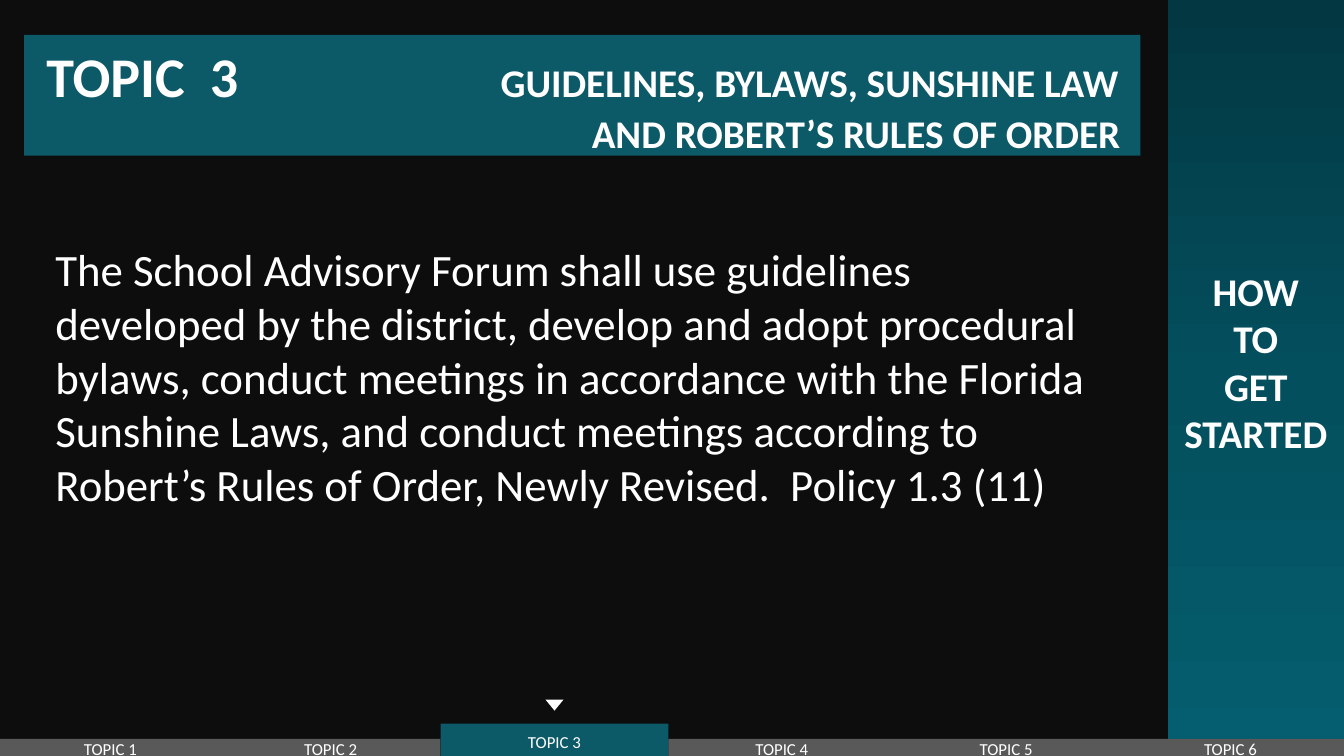
from copy import deepcopy
from dataclasses import dataclass
from itertools import accumulate

from lxml import etree
from pptx import Presentation, util as u
from pptx.dml.color import RGBColor
from pptx.enum import shapes, text
from pptx.oxml.ns import qn


@dataclass(frozen=True)
class Theme:
    font: str = "Calibri"
    ground: str = "0D0D0D"
    accent: str = "0C5968"
    tab: str = "595959"
    ink: str = "FFFFFF"
    sidebar: tuple = ("033742", "044F5E", "055E6F")
    topic_size: int = 40
    heading_size: int = 28
    body_size: int = 32
    tab_size: int = 12


THEME = Theme()
WIDTH, HEIGHT = u.Inches(13.33), u.Inches(7.5)
COLUMN, ROW = WIDTH / 100, HEIGHT / 100  # the slide is a 100 by 100 grid


def apply(target, values):
    for name, value in values.items():
        setattr(target, name, value)


def emu(box):
    left, top, width, height = box
    return [round(n) for n in (left * COLUMN, top * ROW, width * COLUMN, height * ROW)]


def solid(fill, colour):
    fill.solid()
    fill.fore_color.rgb = RGBColor.from_string(colour)


def style(font, size, bold=False):
    apply(font, {"name": THEME.font, "size": u.Pt(size), "bold": bold})
    font.color.rgb = RGBColor.from_string(THEME.ink)


def add_panel(slide, preset, box, colour):
    panel = slide.shapes.add_shape(preset, *emu(box))
    panel.shadow.inherit = False
    panel.line.fill.background()
    solid(panel.fill, colour)
    return panel


def write_centred(panel, words, size, bold=False, bottom=0):
    frame = panel.text_frame
    apply(frame, {"margin_left": 0, "margin_right": 0, "margin_top": 0,
                  "margin_bottom": bottom, "word_wrap": True,
                  "vertical_anchor": text.MSO_ANCHOR.MIDDLE})
    line = frame.paragraphs[0]
    line.text = words
    line.alignment = text.PP_ALIGN.CENTER
    style(line.font, size, bold)


# Sidebar with the section name
def add_sidebar(slide, box):
    sidebar = add_panel(slide, shapes.MSO_SHAPE.RECTANGLE, box, THEME.accent)
    sidebar.fill.gradient()
    sidebar.fill.gradient_angle = 270
    first = sidebar.fill.gradient_stops[0]
    stop_list = sidebar.fill._fill._gradFill.find(qn("a:gsLst"))
    stop_list.insert(1, deepcopy(stop_list[0]))
    for stop, colour, place in zip(sidebar.fill.gradient_stops, THEME.sidebar, (0, 0.5, 1)):
        stop.color.rgb = RGBColor.from_string(colour)
        stop.position = place
    write_centred(sidebar, "HOW\vTO\vGET\vSTARTED", THEME.heading_size,
                  bold=True, bottom=u.Inches(0.32))


# Title banner: topic number at left, heading at right
def add_banner(slide, box):
    banner = slide.shapes.title
    apply(banner, dict(zip(("left", "top", "width", "height"), emu(box))))
    solid(banner.fill, THEME.accent)
    frame = banner.text_frame
    left, right = u.Inches(0.22), u.Inches(0.2)
    apply(frame, {"margin_left": left, "margin_right": right,
                  "margin_top": u.Inches(0.07), "margin_bottom": 0,
                  "word_wrap": True, "auto_size": text.MSO_AUTO_SIZE.NONE,
                  "vertical_anchor": text.MSO_ANCHOR.TOP})

    opening = frame.paragraphs[0]
    opening.alignment = text.PP_ALIGN.LEFT
    tabs = etree.SubElement(opening._p.get_or_add_pPr(), qn("a:tabLst"))
    edge = banner.width - left - right - u.Inches(0.02)
    etree.SubElement(tabs, qn("a:tab"), pos=str(edge), algn="r")
    closing = frame.add_paragraph()
    closing.alignment = text.PP_ALIGN.RIGHT

    for line, words, size in (
            (opening, "TOPIC  3\t", THEME.topic_size),
            (opening, "GUIDELINES, BYLAWS, SUNSHINE LAW", THEME.heading_size),
            (closing, "AND ROBERT’S RULES OF ORDER", THEME.heading_size)):
        part = line.add_run()
        part.text = words
        style(part.font, size, bold=True)


# Policy statement
def add_statement(slide, box):
    frame = slide.shapes.add_textbox(*emu(box)).text_frame
    frame.word_wrap = True
    policy = frame.paragraphs[0]
    policy.text = (
        "The School Advisory Forum shall use guidelines developed by the district, "
        "develop and adopt procedural bylaws, conduct meetings in accordance with "
        "the Florida Sunshine Laws, and conduct meetings according to Robert’s "
        "Rules of Order, Newly Revised.  Policy 1.3 (11)")
    style(policy.font, THEME.body_size)


# Topic tabs along the foot, the current one raised under a marker
def add_topic_tabs(slide, box, shares, current):
    left, top, width, height = box
    rise, marker_width, marker_height = 2, 1.35, 1.47
    starts = accumulate(shares, initial=0)
    for number, (start, share) in enumerate(zip(starts, shares), 1):
        lift = rise if number == current else 0
        tab_left, tab_width = left + width * start / 100, width * share / 100
        tab = add_panel(slide, shapes.MSO_SHAPE.RECTANGLE,
                        (tab_left, top - lift, tab_width, height + lift),
                        THEME.accent if lift else THEME.tab)
        write_centred(tab, f"TOPIC {number}", THEME.tab_size)
        if lift:
            marker = add_panel(slide, shapes.MSO_SHAPE.ISOSCELES_TRIANGLE,
                               (tab_left + (tab_width - marker_width) / 2,
                                top - 5.2, marker_width, marker_height), THEME.ink)
            marker.rotation = 180


def build_topic_slide(deck):
    slide = deck.slides.add_slide(deck.slide_layouts.get_by_name("Title Only"))
    solid(slide.background.fill, THEME.ground)
    add_sidebar(slide, (86.87, 0, 13.13, 100))
    add_banner(slide, (1.8, 4.6, 83.05, 16))
    add_statement(slide, (3.38, 31.33, 79.9, 44.4))
    add_topic_tabs(slide, (0, 97.73, 100, 2.67),
                   (16.43, 16.35, 16.95, 16.88, 16.5, 16.89), current=3)


def main():
    deck = Presentation()
    apply(deck, {"slide_width": WIDTH, "slide_height": HEIGHT})
    build_topic_slide(deck)
    deck.save("out.pptx")


if __name__ == "__main__":
    main()
